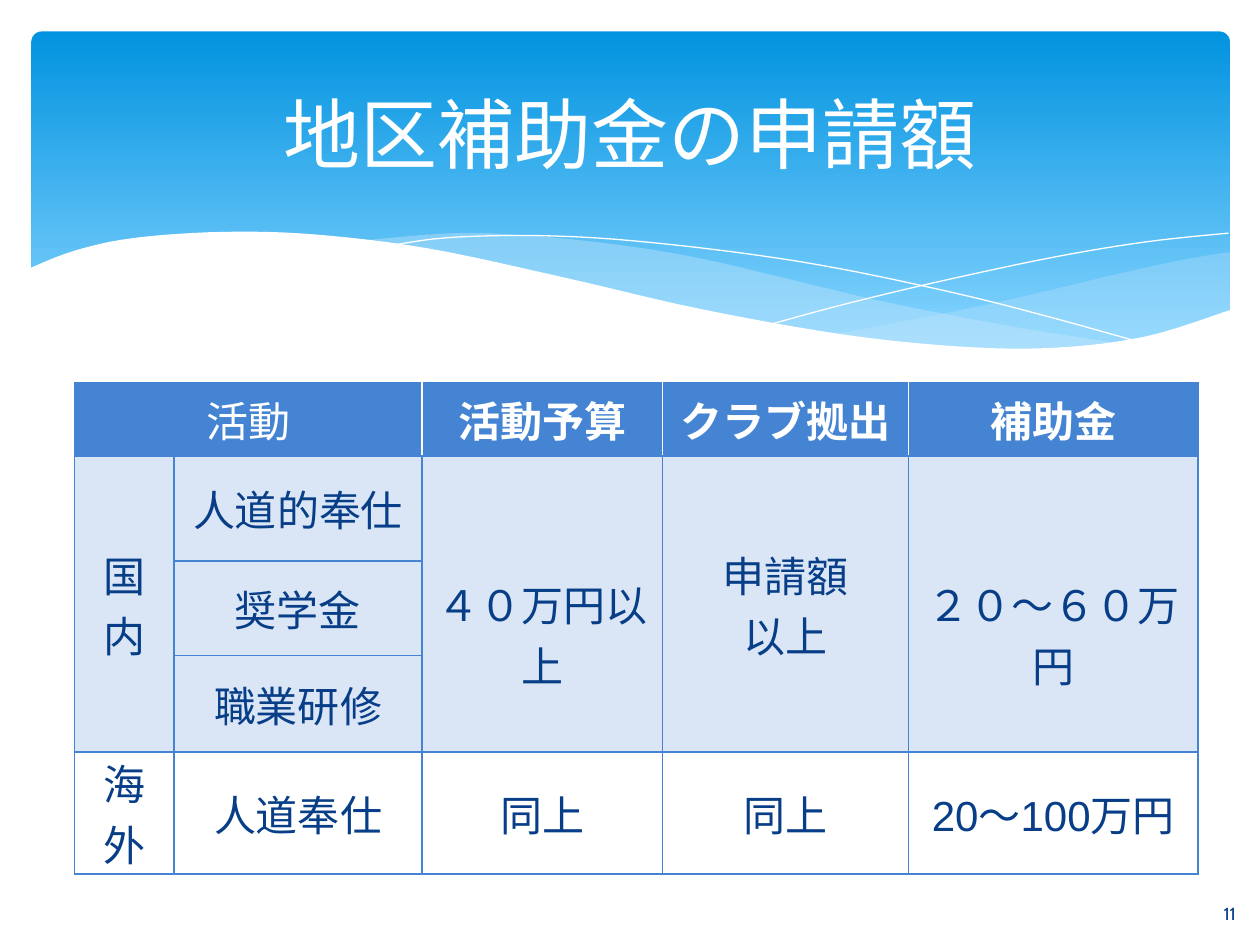
from dataclasses import dataclass

from lxml import etree
from pptx import Presentation
from pptx.dml.color import RGBColor
from pptx.enum.shapes import MSO_SHAPE
from pptx.enum.text import MSO_ANCHOR, PP_ALIGN
from pptx.oxml.ns import qn
from pptx.util import Pt

ROUNDED = MSO_SHAPE.ROUNDED_RECTANGLE
CENTER = PP_ALIGN.CENTER
MIDDLE = MSO_ANCHOR.MIDDLE


@dataclass(frozen=True)
class Theme:
    """Colours, fonts and type sizes of the slide."""
    white: str = "FFFFFF"
    navy: str = "073E87"
    blue: str = "4584D3"
    pale: str = "DAE6F6"
    mist: str = "C6E7FC"
    sky_top: str = "0293E0"
    sky_bottom: str = "83D3FE"
    heading_font: str = "Cabin"
    body_font: str = "Arial"
    title_size: float = 44
    table_size: float = 24
    number_size: float = 10


THEME = Theme()

RIGHT_SWELL = (
    [(703, 144), (673, 149), (631, 158.4), (580, 170.6), (525, 182), (476, 191)],
    [(476, 191), (508, 195), (545, 198.7), (586, 200), (634, 196.6),
     (673, 188.6), (703, 178)],
)
MIDDLE_SWELL = (
    [(643, 196.6), (581, 187), (508, 173), (453, 160), (400, 147.6),
     (352, 139.7), (302, 134.6), (260, 133.2), (206, 137.5)],
    [(206, 137.5), (261, 146), (323, 160), (382, 173), (445, 185.8),
     (500, 194.4), (557, 199.4), (596, 200), (643, 196.6)],
)
FALLING_LINE = [(222.5, 140.4), (254, 136), (300, 134.6), (352, 136.8),
                (419, 144), (479, 153.4), (547, 167.8), (598, 180.7), (653, 196)]
RISING_LINE = [(441.5, 185), (484, 173.5), (538.5, 160.5), (602, 147),
               (655, 138.2), (702, 133.2)]
FRONT_WAVE = [(16.5, 153.5), (42.5, 143.3), (76.5, 136), (127.5, 132.5),
              (180, 134), (245, 142), (322, 158.5), (400, 176.5), (481, 191),
              (548, 198), (603, 198.7), (655, 192.2), (703.5, 177)]
FRONT_BASE = [(703.5, 237), (16.5, 237)]

COLUMN_WIDTHS = [56.9, 141.8, 137.5, 140.4, 165.6]
ROW_HEIGHTS = [41.8, 59.8, 54, 55.4, 55.4]
CELL_TEXTS = [
    ["活動", "", "活動予算", "クラブ拠出", "補助金"],
    ["国内", "人道的奉仕", "４０万円以上", "申請額\n以上", "２０～６０万円"],
    ["", "奨学金", "", "", ""],
    ["", "職業研修", "", "", ""],
    ["海外", "人道奉仕", "同上", "同上", "20～100万円"],
]
MERGES = [((0, 0), (0, 1))] + [((1, column), (3, column)) for column in (0, 2, 3, 4)]
LOWERED_CELLS = {(1, 2), (1, 4)}


def assign(target, values):
    """Set every attribute named in a dict of format values."""
    for name, value in values.items():
        setattr(target, name, value)


def write(frame, text, size, font, color, bold=False):
    """Fill a text frame with centred paragraphs, one per line of text."""
    assign(frame, {"vertical_anchor": MIDDLE, "word_wrap": True})
    for index, line in enumerate(text.split("\n")):
        para = frame.add_paragraph() if index else frame.paragraphs[0]
        para.alignment = CENTER
        span = para.add_run()
        span.text = line
        assign(span.font, {"size": Pt(size), "name": font, "bold": bold})
        span.font.color.rgb = RGBColor.from_string(color)


def smooth(knots, steps=6):
    """Return points of a Catmull-Rom curve through the knots."""
    padded = [knots[0], *knots, knots[-1]]
    points = [knots[0]]
    for a, b, c, d in zip(padded, padded[1:], padded[2:], padded[3:]):
        for step in range(1, steps + 1):
            t = step / steps
            points.append(tuple(
                (2 * q + (r - p) * t + (2 * p - 5 * q + 4 * r - s) * t ** 2
                 + (3 * q - p - 3 * r + s) * t ** 3) / 2
                for p, q, r, s in zip(a, b, c, d)))
    return points


def add_outline(page, points, close):
    """Draw a freeform through points given in pt."""
    first, *rest = [(Pt(x), Pt(y)) for x, y in points]
    builder = page.shapes.build_freeform(*first)
    builder.add_line_segments(rest, close=close)
    shape = builder.convert_to_shape()
    shape.shadow.inherit = False
    return shape


def add_wave(page, points, color, opacity=100):
    """Draw a filled wave without an outline."""
    wave = add_outline(page, points, True)
    wave.line.fill.background()
    wave.fill.solid()
    wave.fill.fore_color.rgb = RGBColor.from_string(color)
    if opacity < 100:
        node = next(wave.element.spPr.iter(qn("a:srgbClr")))
        etree.SubElement(node, qn("a:alpha"), val=str(opacity * 1000))


def add_hairline(page, knots):
    """Draw a thin white curve."""
    curve = add_outline(page, smooth(knots), False)
    curve.fill.background()
    curve.line.color.rgb = RGBColor.from_string(THEME.white)
    curve.line.width = Pt(0)


def add_banner(page):
    """Draw the gradient panel and the waves at its foot."""
    panel = page.shapes.add_shape(ROUNDED, Pt(18), Pt(18), Pt(684.7), Pt(194.4))
    panel.adjustments[0] = 0.03
    panel.shadow.inherit = False
    panel.line.fill.background()
    panel.fill.gradient()
    panel.fill.gradient_angle = 270
    stops = ((0, THEME.sky_top), (0.9, THEME.sky_bottom))
    for stop, (position, color) in zip(panel.fill.gradient_stops, stops):
        stop.position = position
        stop.color.rgb = RGBColor.from_string(color)
    for (upper, lower), opacity in ((RIGHT_SWELL, 29), (MIDDLE_SWELL, 40)):
        add_wave(page, smooth(upper) + smooth(lower)[1:], THEME.mist, opacity)
    for knots in (FALLING_LINE, RISING_LINE):
        add_hairline(page, knots)
    add_wave(page, smooth(FRONT_WAVE) + FRONT_BASE, THEME.white)


def place_title(page, text):
    """Set the title placeholder in front of the banner."""
    title = page.shapes.title
    assign(title, {"left": Pt(36), "top": Pt(26.6), "width": Pt(648), "height": Pt(98.6)})
    write(title.text_frame, text, THEME.title_size, THEME.heading_font, THEME.white)
    page.shapes.element.append(title.element)


def set_borders(cell, colors):
    """Give a cell 1 pt borders from a dict of side to colour."""
    properties = cell._tc.get_or_add_tcPr()
    for side, color in colors.items():
        line = etree.SubElement(properties, qn(f"a:ln{side}"), w=str(Pt(1)))
        fill = etree.SubElement(line, qn("a:solidFill"))
        etree.SubElement(fill, qn("a:srgbClr"), val=color)


def format_cell(cell, row, column):
    """Set borders, fill, margins and text of one cell."""
    header, last = row == 0, len(COLUMN_WIDTHS) - 1
    set_borders(cell, {
        "L": THEME.white if header and column > 0 else THEME.blue,
        "R": THEME.white if header and column < last else THEME.blue,
        "T": THEME.blue,
        "B": THEME.blue,
    })
    color = THEME.blue if header else THEME.white if row == 4 else THEME.pale
    cell.fill.solid()
    cell.fill.fore_color.rgb = RGBColor.from_string(color)
    lowered = Pt(34) if (row, column) in LOWERED_CELLS else 0
    assign(cell, {"margin_left": Pt(5), "margin_right": Pt(5), "margin_top": lowered,
                  "margin_bottom": 0, "vertical_anchor": MIDDLE})
    text = CELL_TEXTS[row][column]
    if text:
        heading = column > 0 if header else column == 1
        write(cell.text_frame, text, THEME.table_size,
              THEME.heading_font if heading else THEME.body_font,
              THEME.white if header else THEME.navy, header and column > 0)


def add_grant_table(page):
    """Add the table of activities, budgets and grants."""
    frame = page.shapes.add_table(len(ROW_HEIGHTS), len(COLUMN_WIDTHS), Pt(42.5), Pt(218.9),
                                  Pt(sum(COLUMN_WIDTHS)), Pt(sum(ROW_HEIGHTS)))
    table = frame.table
    assign(table, {"first_row": False, "horz_banding": False})
    for column, width in zip(table.columns, COLUMN_WIDTHS):
        column.width = Pt(width)
    for row, height in zip(table.rows, ROW_HEIGHTS):
        row.height = Pt(height)
    for start, end in MERGES:
        table.cell(*start).merge(table.cell(*end))
    for row in range(len(ROW_HEIGHTS)):
        for column in range(len(COLUMN_WIDTHS)):
            format_cell(table.cell(row, column), row, column)


def add_page_number(page, text):
    """Add the page number in the bottom right corner."""
    box = page.shapes.add_textbox(Pt(688.3), Pt(507.6), Pt(28.8), Pt(28.8))
    assign(box.text_frame, {"margin_left": 0, "margin_right": 0})
    write(box.text_frame, text, THEME.number_size, THEME.heading_font, THEME.navy)


def main():
    """Build the slide and save it."""
    deck = Presentation()
    assign(deck, {"slide_width": Pt(720), "slide_height": Pt(540)})
    page = deck.slides.add_slide(deck.slide_layouts[5])
    add_banner(page)
    place_title(page, "地区補助金の申請額")
    add_grant_table(page)
    add_page_number(page, "11")
    deck.save("out.pptx")


if __name__ == "__main__":
    main()
